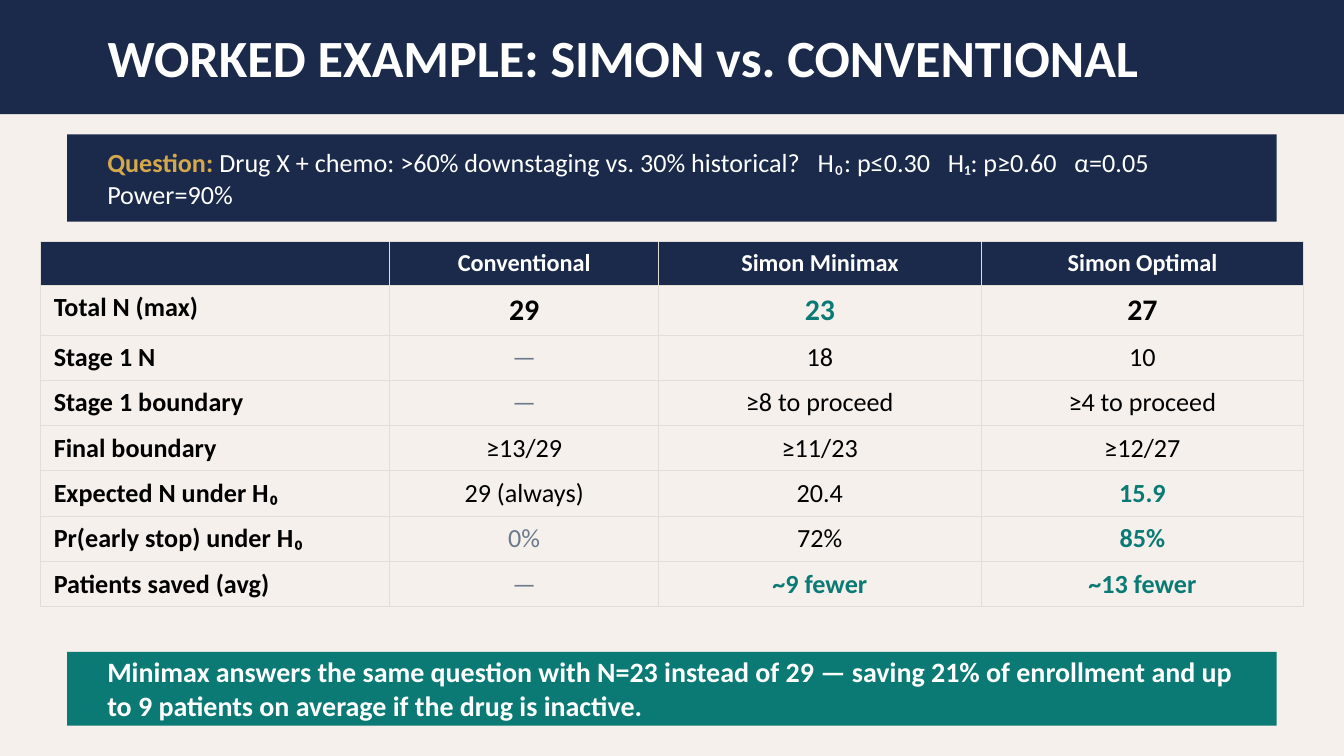
from lxml.etree import SubElement
from pptx import Presentation
from pptx.dml.color import RGBColor
from pptx.enum.shapes import MSO_SHAPE
from pptx.enum.text import MSO_ANCHOR, MSO_AUTO_SIZE, PP_ALIGN
from pptx.oxml.ns import qn
from pptx.util import Inches, Pt

NAVY, TEAL, GOLD, GRAY = "1B2A4A", "0B7A75", "D4A84B", "6B7B8D"
WHITE, BLACK, CREAM, RULE = "FFFFFF", "000000", "F5F0EB", "E2DDD7"


def color(text):
    return RGBColor.from_string(text)


def add_run(para, text, size, tint, bold=True):
    run = para.add_run()
    run.text = text
    run.font.name = "Calibri"
    run.font.size = Pt(size)
    run.font.bold = bold
    run.font.color.rgb = color(tint)


prs = Presentation()
prs.slide_width = Inches(10)
prs.slide_height = Inches(10) * 9 // 16
slide = prs.slides.add_slide(prs.slide_layouts[5])
slide.background.fill.solid()
slide.background.fill.fore_color.rgb = color(CREAM)
title = slide.shapes.title

# Bands: left, top, width, height, fill; all lie behind the title
bands = [
    (0, 0, 10, 0.85, NAVY),
    (0.5, 1, 9, 0.65, NAVY),
    (0.5, 4.85, 9, 0.55, TEAL),
]
for *place, fill in bands:
    band = slide.shapes.add_shape(MSO_SHAPE.RECTANGLE, *map(Inches, place))
    band.shadow.inherit = False
    band.fill.solid()
    band.fill.fore_color.rgb = color(fill)
    band.line.fill.background()
    title.element.addprevious(band.element)

# Band texts: top, height, runs; the first fills the title
texts = [
    (0.12, 0.6, [("WORKED EXAMPLE: SIMON vs. CONVENTIONAL", 28, WHITE)]),
    (1.05, 0.55, [
        ("Question: ", 14, GOLD),
        ("Drug X + chemo: >60% downstaging vs. 30% historical?   "
         "H₀: p≤0.30   H₁: p≥0.60   α=0.05   Power=90%", 14, WHITE, False),
    ]),
    (4.87, 0.5, [
        ("Minimax answers the same question with N=23 instead of 29 — saving 21% "
         "of enrollment and up to 9 patients on average if the drug is inactive.",
         15, WHITE),
    ]),
]
for num, (top, height, runs) in enumerate(texts):
    place = [Inches(n) for n in (0.7, top, 8.6, height)]
    if num == 0:
        box = title
        box.left, box.top, box.width, box.height = place
    else:
        box = slide.shapes.add_textbox(*place)
    frame = box.text_frame
    frame.word_wrap = True
    frame.auto_size = MSO_AUTO_SIZE.NONE
    frame.vertical_anchor = MSO_ANCHOR.MIDDLE
    para = frame.paragraphs[0]
    para.alignment = PP_ALIGN.LEFT
    for run in runs:
        add_run(para, *run)

# Design comparison
rows = [
    ("", "Conventional", "Simon Minimax", "Simon Optimal"),
    ("Total N (max)", "29", "23", "27"),
    ("Stage 1 N", "—", "18", "10"),
    ("Stage 1 boundary", "—", "≥8 to proceed", "≥4 to proceed"),
    ("Final boundary", "≥13/29", "≥11/23", "≥12/27"),
    ("Expected N under H₀", "29 (always)", "20.4", "15.9"),
    ("Pr(early stop) under H₀", "0%", "72%", "85%"),
    ("Patients saved (avg)", "—", "~9 fewer", "~13 fewer"),
]
best = {"23", "15.9", "85%", "~9 fewer", "~13 fewer"}
muted = {"—", "0%"}

grid = slide.shapes.add_table(
    len(rows), 4, Inches(0.3), Inches(1.8), Inches(9.4), Inches(2.68)).table
for col, width in zip(grid.columns, (2.6, 2, 2.4, 2.4)):
    col.width = Inches(width)
for r, row in enumerate(rows):
    # Rows grow to fit their text
    grid.rows[r].height = Inches(0.3)
    for c, text in enumerate(row):
        cell = grid.cell(r, c)
        props = cell._tc.get_or_add_tcPr()
        for side in ("a:lnL", "a:lnR", "a:lnT", "a:lnB"):
            line = SubElement(props, qn(side), w=str(Pt(0.5)))
            solid = SubElement(line, qn("a:solidFill"))
            SubElement(solid, qn("a:srgbClr"), val=RULE)
        if r == 0:
            cell.fill.solid()
            cell.fill.fore_color.rgb = color(NAVY)
            size, tint = 13, WHITE
        else:
            cell.fill.background()
            size = 16 if r == 1 and c else 14
            tint = TEAL if text in best else GRAY if text in muted else BLACK
        para = cell.text_frame.paragraphs[0]
        para.alignment = PP_ALIGN.CENTER if c else PP_ALIGN.LEFT
        if text:
            add_run(para, text, size, tint, r < 2 or c == 0 or text in best)
        else:
            # Keep the empty cell as low as its row
            SubElement(para._p, qn("a:endParaRPr"), sz=str(size * 100))

prs.save("out.pptx")
